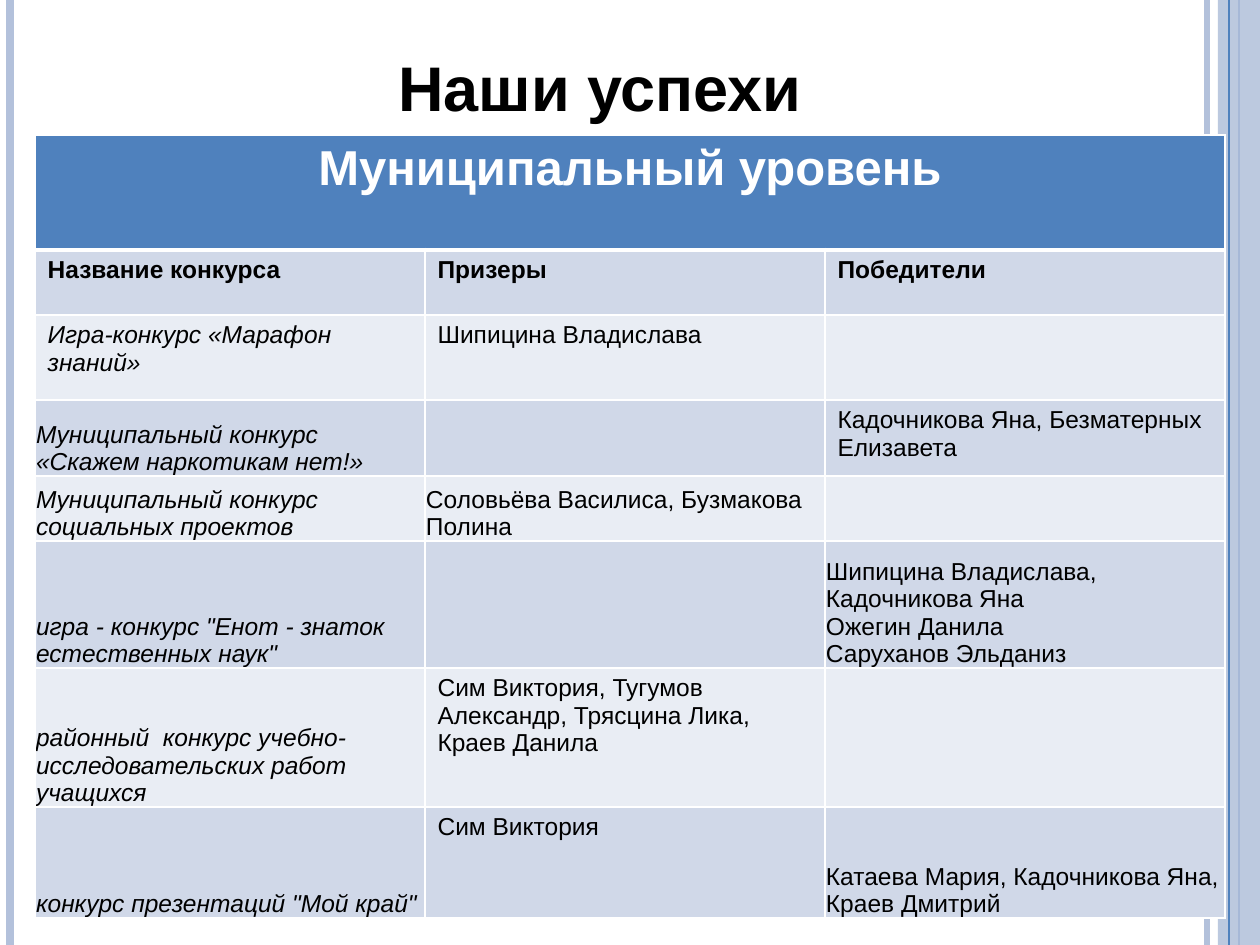
from lxml.etree import SubElement
from pptx import Presentation
from pptx.dml.color import RGBColor
from pptx.enum.shapes import MSO_CONNECTOR, MSO_SHAPE
from pptx.enum.text import MSO_ANCHOR, PP_ALIGN
from pptx.oxml.ns import qn
from pptx.util import Pt

PX = 914400 // 126
WIDTH, HEIGHT = 1260, 945
BLACK = RGBColor(0x00, 0x00, 0x00)
WHITE = RGBColor(0xFF, 0xFF, 0xFF)
BLUE = RGBColor(0x4F, 0x81, 0xBD)
PALE = RGBColor(0xB3, 0xC1, 0xDB)
BANDS = [RGBColor(0xD0, 0xD8, 0xE8), RGBColor(0xE9, 0xED, 0xF4)]


def add_text(para, text, size, color, bold=False, italic=False):
    span = para.add_run()
    span.text = text
    font = span.font
    font.name, font.size = "Arial", Pt(size)
    font.bold, font.italic = bold, italic
    font.color.rgb = color


def style_cell(cell, fill, bottom_width=1):
    props = cell._tc.get_or_add_tcPr()
    for side in "LRTB":
        width = bottom_width if side == "B" else 1
        border = SubElement(props, qn(f"a:ln{side}"), w=str(Pt(width)))
        paint = SubElement(border, qn("a:solidFill"))
        SubElement(paint, qn("a:srgbClr"), val=str(WHITE))
    cell.fill.solid()
    cell.fill.fore_color.rgb = fill


deck = Presentation()
deck.slide_width, deck.slide_height = WIDTH * PX, HEIGHT * PX
page = deck.slides.add_slide(deck.slide_layouts[5])

stripes = [
    (1207, PALE, 3),
    (10, PALE, 4.5),
    (1239, BLUE, 1.5),
    (None, PALE, None),
    (1229, BLUE, 0.75),
]
for x, color, weight in stripes:
    if x is None:
        band = page.shapes.add_shape(MSO_SHAPE.RECTANGLE, 1218 * PX, 0, 42 * PX, HEIGHT * PX)
        band.shadow.inherit = False
        band.line.fill.background()
        band.fill.solid()
        band.fill.fore_color.rgb = color
        tint = band._element.spPr.find(qn("a:solidFill"))[0]
        SubElement(tint, qn("a:alpha"), val="87000")
        continue
    stripe = page.shapes.add_connector(MSO_CONNECTOR.STRAIGHT, x * PX, 0, x * PX, HEIGHT * PX)
    stripe.line.color.rgb = color
    stripe.line.width = Pt(weight)
    SubElement(stripe._element.spPr, qn("a:effectLst"))

title = page.shapes.title
title.left, title.top, title.width, title.height = 59 * PX, 42 * PX, 1082 * PX, 88 * PX
title.text_frame.vertical_anchor = MSO_ANCHOR.MIDDLE
heading = title.text_frame.paragraphs[0]
heading.alignment = PP_ALIGN.CENTER
add_text(heading, "Наши успехи", 36, BLACK, bold=True)

column_widths = [390, 400, 400]
row_heights = [115, 65, 85, 76, 65, 127, 139, 111]
headings = ["Название конкурса", "Призеры", "Победители"]
contests = [
    ["Игра-конкурс «Марафон знаний»", "Шипицина Владислава", ""],
    ["Муниципальный конкурс «Скажем наркотикам нет!»", "", "Кадочникова Яна, Безматерных Елизавета"],
    ["Муниципальный конкурс социальных проектов", "Соловьёва Василиса, Бузмакова Полина", ""],
    ['игра - конкурс "Енот - знаток естественных наук"', "",
     "Шипицина Владислава, Кадочникова Яна\nОжегин Данила\nСаруханов Эльданиз"],
    ["районный  конкурс учебно- исследовательских работ учащихся",
     "Сим Виктория, Тугумов Александр, Трясцина Лика, Краев Данила", ""],
    ['конкурс презентаций "Мой край"', "Сим Виктория", "Катаева Мария, Кадочникова Яна, Краев Дмитрий"],
]
bottom_cells = {(3, 0), (4, 0), (4, 1), (5, 0), (5, 2), (6, 0), (7, 0), (7, 2)}

table = page.shapes.add_table(
    len(row_heights), len(column_widths), 35 * PX, 135 * PX,
    sum(column_widths) * PX, sum(row_heights) * PX).table
for column, width in zip(table.columns, column_widths):
    column.width = width * PX
for row, height in zip(table.rows, row_heights):
    row.height = height * PX

for cell in table.rows[0].cells:
    style_cell(cell, BLUE, bottom_width=3)
banner = table.cell(0, 0)
banner.merge(table.cell(0, 2))
level = banner.text_frame.paragraphs[0]
level.alignment = PP_ALIGN.CENTER
add_text(level, "Муниципальный уровень", 28, WHITE, bold=True)

for r, texts in enumerate([headings] + contests, start=1):
    for c, text in enumerate(texts):
        cell = table.cell(r, c)
        style_cell(cell, BANDS[(r - 1) % 2])
        if (r, c) in bottom_cells:
            cell.vertical_anchor = MSO_ANCHOR.BOTTOM
            cell.margin_left = cell.margin_right = cell.margin_top = PX
            cell.margin_bottom = 0
        if not text:
            continue
        for i, line in enumerate(text.split("\n")):
            frame = cell.text_frame
            para = frame.add_paragraph() if i else frame.paragraphs[0]
            add_text(para, line, 14, BLACK, bold=r == 1, italic=r > 1 and c == 0)

deck.save("out.pptx")
